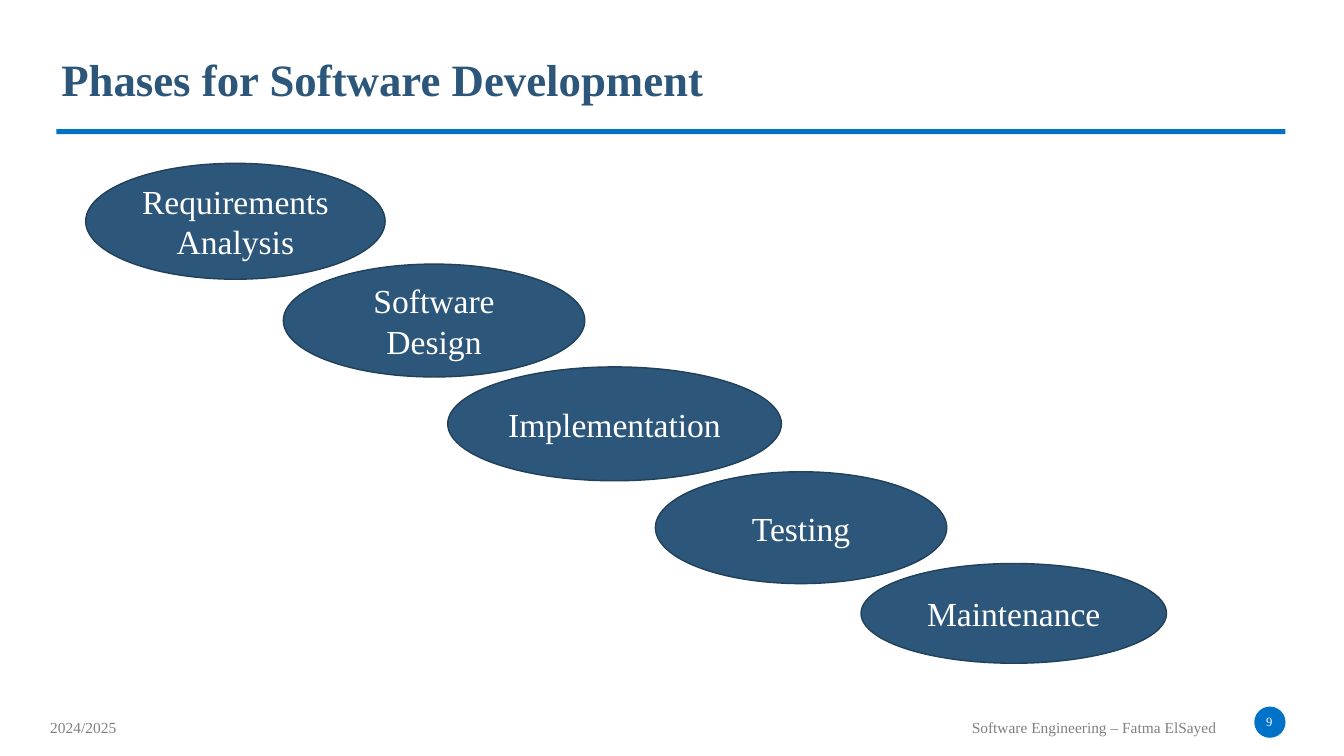
import pptx
import pptx.util
import pptx.dml.color
import pptx.enum.shapes
import pptx.enum.text

EMU_PER_PX = 9144  # 100 px to the inch
FONT = "Times New Roman"
COLORS = {
    "navy": "2C567A",
    "navy_edge": "21405A",
    "blue": "0072C7",
    "gray": "808080",
    "white": "FFFFFF",
}
SHAPES = pptx.enum.shapes.MSO_SHAPE
ALIGN = pptx.enum.text.PP_ALIGN
ANCHOR = pptx.enum.text.MSO_ANCHOR
AUTO_SIZE = pptx.enum.text.MSO_AUTO_SIZE

PHASES = [
    ("Requirements Analysis", (85, 162, 297, 115)),
    ("Software Design", (281, 262, 299, 112)),
    ("Implementation", (444, 364, 331, 113)),
    ("Testing", (650, 468, 289, 111)),
    ("Maintenance", (854, 559, 303, 99)),
]


def px(length):
    return pptx.util.Emu(length * EMU_PER_PX)


def color(name):
    return pptx.dml.color.RGBColor.from_string(COLORS[name])


def set_attributes(target, values):
    for name, value in values.items():
        setattr(target, name, value)


def write_text(shape, text, size, color_name, bold=False, frame_format=None, paragraph_format=None):
    frame = shape.text_frame
    set_attributes(frame, frame_format or {})
    paragraph = frame.paragraphs[0]
    set_attributes(paragraph, paragraph_format or {})
    run = paragraph.add_run()
    run.text = text
    set_attributes(run.font, {"name": FONT, "size": pptx.util.Pt(size), "bold": bold})
    run.font.color.rgb = color(color_name)


def add_filled_shape(slide, kind, box, fill, edge=None):
    shape = slide.shapes.add_shape(kind, *map(px, box))
    shape.shadow.inherit = False
    shape.fill.solid()
    shape.fill.fore_color.rgb = color(fill)
    if edge:
        shape.line.color.rgb = color(edge)
        shape.line.width = pptx.util.Pt(1)
    else:
        shape.line.fill.background()
    return shape


def add_label(slide, box, text, size, color_name, bold=False, space_before=0):
    """Add one line of text in a box that fits it."""
    label = slide.shapes.add_textbox(*map(px, box))
    write_text(
        label, text, size, color_name, bold,
        {"word_wrap": False, "auto_size": AUTO_SIZE.SHAPE_TO_FIT_TEXT},
        {"space_before": pptx.util.Pt(space_before)},
    )


def add_page_number(slide, number):
    add_filled_shape(slide, SHAPES.OVAL, (1244, 701, 31, 31), "blue")
    label = slide.shapes.add_textbox(*map(px, (1243, 706, 32, 20)))
    margins = dict.fromkeys(("margin_left", "margin_top", "margin_right", "margin_bottom"), 0)
    write_text(
        label, number, 9, "white",
        frame_format={"word_wrap": True, "vertical_anchor": ANCHOR.MIDDLE, **margins},
        paragraph_format={"alignment": ALIGN.CENTER},
    )


def add_phase(slide, text, box):
    ellipse = add_filled_shape(slide, SHAPES.OVAL, box, "navy", "navy_edge")
    write_text(
        ellipse, text, 24, "white",
        frame_format={"word_wrap": True, "vertical_anchor": ANCHOR.MIDDLE},
        paragraph_format={"alignment": ALIGN.CENTER},
    )


def main():
    presentation = pptx.Presentation()
    set_attributes(presentation, {"slide_width": px(1333), "slide_height": px(750)})
    slide = presentation.slides.add_slide(presentation.slide_layouts[6])

    add_label(slide, (954, 707, 264, 29), "Software Engineering – Fatma ElSayed", 11, "gray")
    add_label(slide, (40, 707, 86, 29), "2024/2025", 11, "gray")
    add_page_number(slide, "9")
    add_filled_shape(slide, SHAPES.RECTANGLE, (56, 128, 1219, 5), "blue")
    add_label(
        slide, (51, 46, 663, 64), "Phases for Software Development", 32, "navy",
        bold=True, space_before=6.4,
    )
    for text, box in PHASES:
        add_phase(slide, text, box)

    presentation.save("out.pptx")


if __name__ == "__main__":
    main()
